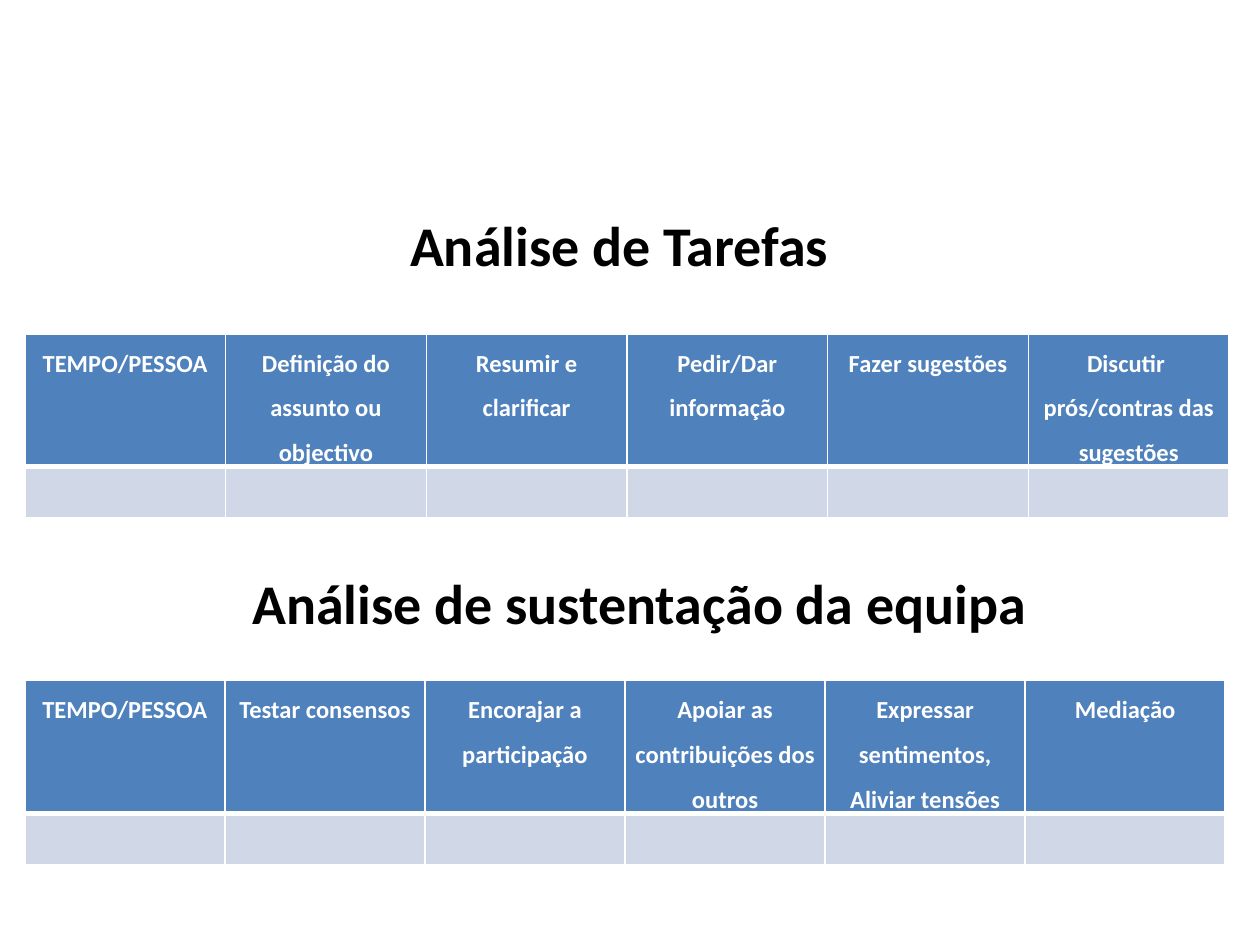
from lxml.etree import SubElement
from pptx import Presentation
from pptx.dml.color import RGBColor
from pptx.enum.text import MSO_ANCHOR, PP_ALIGN
from pptx.oxml import parse_xml
from pptx.oxml.ns import nsdecls, qn
from pptx.util import Pt


def color(hex_value):
    return RGBColor.from_string(hex_value)


def set_values(target, values):
    for name, value in values.items():
        setattr(target, name, value)


class SlideBuilder:
    font_name = "Calibri"
    title_size, header_size = 32, 14
    black, white = "000000", "FFFFFF"
    header_fill, body_fill = "4F81BD", "D0D8E8"
    header_height, body_height = 75.9, 29.2
    rule, header_rule = 1, 3

    def __init__(self, slide):
        self.slide = slide

    def add_lines(self, frame, lines, size, hex_value, line_spacing=1):
        for index, line in enumerate(lines):
            para = frame.paragraphs[0] if index == 0 else frame.add_paragraph()
            set_values(para, {"alignment": PP_ALIGN.CENTER,
                              "line_spacing": line_spacing})
            span = para.add_run()
            span.text = line
            set_values(span.font, {"name": self.font_name, "size": Pt(size),
                                   "bold": True})
            span.font.color.rgb = color(hex_value)

    def title(self, text, left, top, width, height):
        box = self.slide.shapes.add_textbox(Pt(left), Pt(top), Pt(width), Pt(height))
        set_values(box.text_frame, {"word_wrap": True,
                                    "vertical_anchor": MSO_ANCHOR.MIDDLE})
        self.add_lines(box.text_frame, [text], self.title_size, self.black)

    def borders(self, cell, top, bottom):
        """Draw the white cell edges, which must precede the fill."""
        properties = cell._tc.get_or_add_tcPr()
        widths = {"lnL": self.rule, "lnR": self.rule, "lnT": top, "lnB": bottom}
        for index, (edge, width) in enumerate(widths.items()):
            line = parse_xml(f'<a:{edge} {nsdecls("a")} w="{Pt(width)}"/>')
            fill = SubElement(line, qn("a:solidFill"))
            SubElement(fill, qn("a:srgbClr")).set("val", self.white)
            properties.insert(index, line)

    def table(self, headings, left, top, width):
        count = len(headings)
        height = self.header_height + self.body_height
        table = self.slide.shapes.add_table(
            2, count, Pt(left), Pt(top), Pt(width), Pt(height)).table
        for row, row_height in zip(table.rows, (self.header_height, self.body_height)):
            row.height = Pt(row_height)
        for index, lines in enumerate(headings):
            table.columns[index].width = Pt(width / count)
            header, body = table.cell(0, index), table.cell(1, index)
            for cell, fill in ((header, self.header_fill), (body, self.body_fill)):
                cell.fill.solid()
                cell.fill.fore_color.rgb = color(fill)
            set_values(header, {"margin_left": Pt(5), "margin_right": Pt(5),
                                "margin_top": Pt(0), "margin_bottom": Pt(0)})
            self.add_lines(header.text_frame, lines, self.header_size, self.white, 1.5)
            self.borders(header, self.rule, self.header_rule)
            self.borders(body, self.header_rule, self.rule)


def main():
    deck = Presentation()
    set_values(deck, {"slide_width": Pt(720), "slide_height": Pt(540)})
    page = SlideBuilder(deck.slides.add_slide(deck.slide_layouts[6]))

    task_headings = [
        ["TEMPO/PESSOA"],
        ["Definição do assunto ou objectivo"],
        ["Resumir e clarificar"],
        ["Pedir/Dar informação"],
        ["Fazer sugestões"],
        ["Discutir ", "prós/contras das sugestões"],
    ]
    team_headings = [
        ["TEMPO/PESSOA"],
        ["Testar consensos"],
        ["Encorajar a participação"],
        ["Apoiar as contribuições dos outros"],
        ["Expressar sentimentos,", "Aliviar tensões"],
        ["Mediação"],
    ]
    page.title("Análise de Tarefas", 48, 117, 612, 45)
    page.table(task_headings, 14.2, 190.8, 688.3)
    page.table(team_headings, 14.2, 389, 686)
    page.title("Análise de sustentação da equipa", 59.5, 321.3, 612, 45)
    deck.save("out.pptx")


if __name__ == "__main__":
    main()
